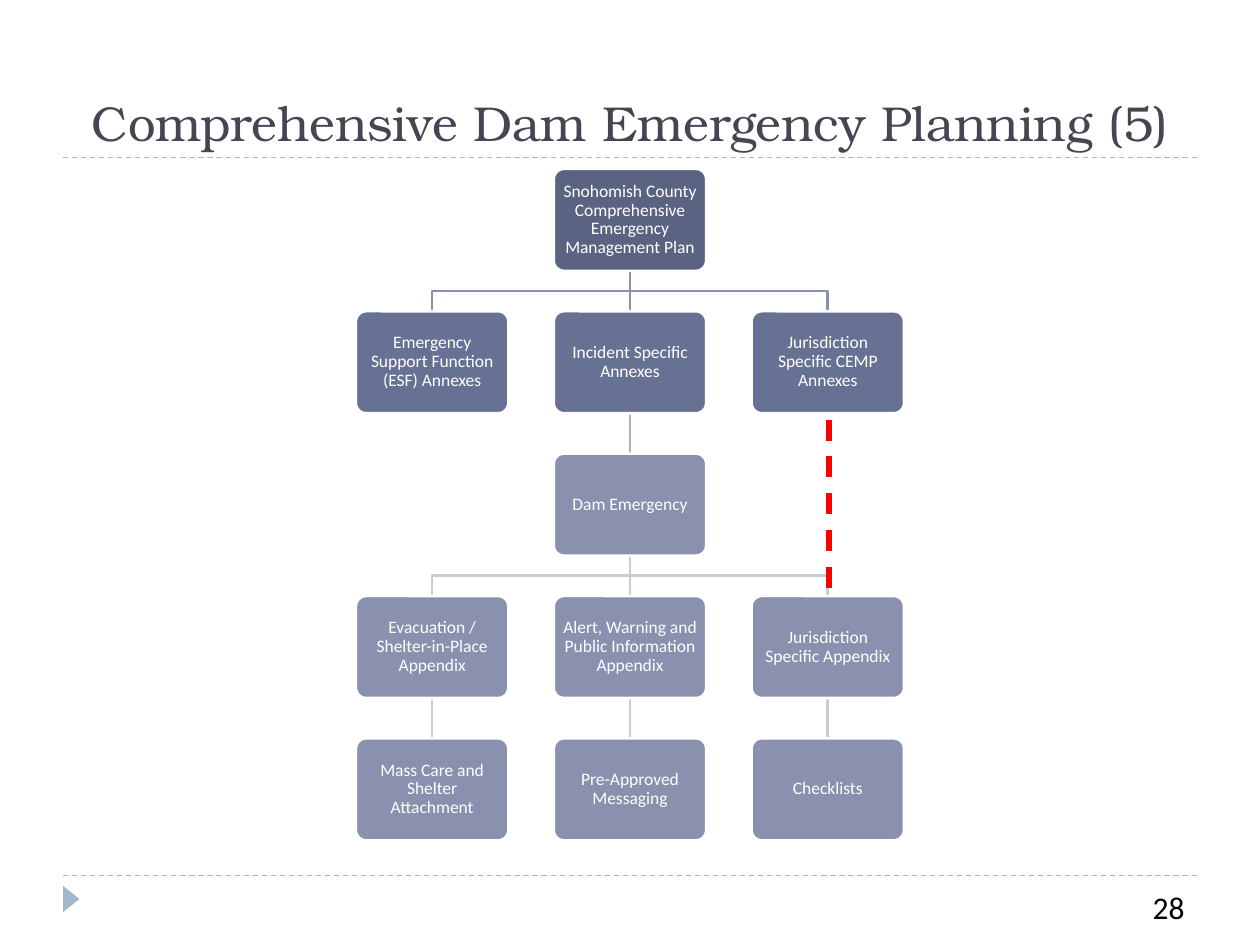
"""Build the slide on comprehensive dam emergency planning, an org chart of plans and annexes."""
from lxml import etree
from pptx import Presentation
from pptx.dml.color import RGBColor
from pptx.enum.dml import MSO_LINE
from pptx.enum.shapes import MSO_CONNECTOR, MSO_SHAPE
from pptx.enum.text import MSO_ANCHOR, PP_ALIGN
from pptx.oxml.ns import qn
from pptx.util import Inches, Pt

STRAIGHT = MSO_CONNECTOR.STRAIGHT
ROUNDED, TRIANGLE = MSO_SHAPE.ROUNDED_RECTANGLE, MSO_SHAPE.ISOSCELES_TRIANGLE
DASH = MSO_LINE.DASH
MIDDLE, BOTTOM, TOP = MSO_ANCHOR.MIDDLE, MSO_ANCHOR.BOTTOM, MSO_ANCHOR.TOP
CENTER, RIGHT = PP_ALIGN.CENTER, PP_ALIGN.RIGHT

THEME = {
    "title": RGBColor.from_string("464653"),
    "accent": RGBColor.from_string("9FB8CD"),
    "white": RGBColor.from_string("FFFFFF"),
    "black": RGBColor.from_string("000000"),
    "red": RGBColor.from_string("FF0000"),
    "boxes": [RGBColor.from_string(c) for c in ("5B6383", "677194", "8991AF", "8991AF", "8991AF")],
    "links": [RGBColor.from_string(c) for c in ("8991AF", "ADB1C5", "C9CCD7", "C9CCD7")],
    "heading_font": "TeX Gyre Bonum",
    "body_font": "Calibri",
    "title_size": 28,
    "box_size": 10,
    "number_size": 18,
}


def write(tf, text, size, color, font=THEME["body_font"], align=CENTER, anchor=MIDDLE, spacing=1.0):
    tf.word_wrap = True
    tf.vertical_anchor = anchor
    p = tf.paragraphs[0]
    p.alignment = align
    p.line_spacing = spacing
    r = p.add_run()
    r.text = text
    r.font.name = font
    r.font.size = Pt(size)
    r.font.color.rgb = color


def add_line(x1, y1, x2, y2, color, width, dash=None):
    cxn = s.shapes.add_connector(STRAIGHT, Inches(x1), Inches(y1), Inches(x2), Inches(y2))
    cxn.line.color.rgb = color
    cxn.line.width = Pt(width)
    if dash:
        cxn.line.dash_style = dash
    etree.SubElement(cxn._element.spPr, qn("a:effectLst"))
    return cxn


prs = Presentation()
prs.slide_width, prs.slide_height = Inches(10), Inches(7.5)
s = prs.slides.add_slide(prs.slide_layouts[6])

for y in (6.95, 1.25):
    add_line(0.5, y, 9.5, y, THEME["accent"], 0.75, DASH)

marker = s.shapes.add_shape(TRIANGLE, Inches(0.46), Inches(7.07), Inches(0.21), Inches(0.13))
marker.rotation = 90
marker.shadow.inherit = False
marker.fill.solid()
marker.fill.fore_color.rgb = THEME["accent"]
marker.line.fill.background()

title = s.shapes.add_textbox(Inches(0.5), Inches(0.17), Inches(9), Inches(1.08))
write(title.text_frame, "Comprehensive Dam Emergency Planning (5)", THEME["title_size"],
      THEME["title"], font=THEME["heading_font"], anchor=BOTTOM)

BOX_W, BOX_H = 1.21, 0.81
COL_STEP, ROW_STEP = 1.57, 1.13
FIRST_X, FIRST_Y = 5 - COL_STEP, 1.34

plans = {
    (0, 1): "Snohomish County Comprehensive Emergency Management Plan",
    (1, 0): "Emergency Support Function (ESF) Annexes",
    (1, 1): "Incident Specific Annexes",
    (1, 2): "Jurisdiction Specific CEMP Annexes",
    (2, 1): "Dam Emergency",
    (3, 0): "Evacuation / Shelter-in-Place Appendix",
    (3, 1): "Alert, Warning and Public Information Appendix",
    (3, 2): "Jurisdiction Specific Appendix",
    (4, 0): "Mass Care and Shelter Attachment",
    (4, 1): "Pre-Approved Messaging",
    (4, 2): "Checklists",
}

boxes = {}
for (row, col), text in plans.items():
    box = s.shapes.add_shape(ROUNDED, Inches(FIRST_X + col * COL_STEP - BOX_W / 2),
                             Inches(FIRST_Y + row * ROW_STEP), Inches(BOX_W), Inches(BOX_H))
    box.adjustments[0] = 0.1
    box.shadow.inherit = False
    box.fill.solid()
    box.fill.fore_color.rgb = THEME["boxes"][row]
    box.line.color.rgb = THEME["white"]
    box.line.width = Pt(1.5)
    tf = box.text_frame
    tf.margin_left = tf.margin_right = tf.margin_top = tf.margin_bottom = Inches(0.04)
    write(tf, text, THEME["box_size"], THEME["white"], spacing=0.9)
    boxes[row, col] = box

for row, col in plans:
    if row == 0:
        continue
    parent_col = col if (row - 1, col) in plans else 1
    x1, x2 = FIRST_X + parent_col * COL_STEP, FIRST_X + col * COL_STEP
    y2 = FIRST_Y + row * ROW_STEP
    y1 = y2 - ROW_STEP + BOX_H
    color = THEME["links"][row - 1]
    if parent_col == col:
        link = add_line(x1, y1, x2, y2, color, 1.5)
        link.begin_connect(boxes[row - 1, col], 2)
        link.end_connect(boxes[row, col], 0)
    else:
        y_mid = (y1 + y2) / 2
        fb = s.shapes.build_freeform(Inches(x1), Inches(y1))
        fb.add_line_segments([(Inches(x), Inches(y)) for x, y in ((x1, y_mid), (x2, y_mid), (x2, y2))],
                             close=False)
        link = fb.convert_to_shape()
        link.shadow.inherit = False
        link.fill.background()
        link.line.color.rgb = color
        link.line.width = Pt(1.5)
    boxes[0, 1]._element.addprevious(link._element)

add_line(6.58, 3.33, 6.58, 4.67, THEME["red"], 3, DASH)

number = s.shapes.add_textbox(Inches(8.67), Inches(7), Inches(0.83), Inches(0.4))
write(number.text_frame, "28", THEME["number_size"], THEME["black"], align=RIGHT, anchor=TOP)

prs.save("out.pptx")
